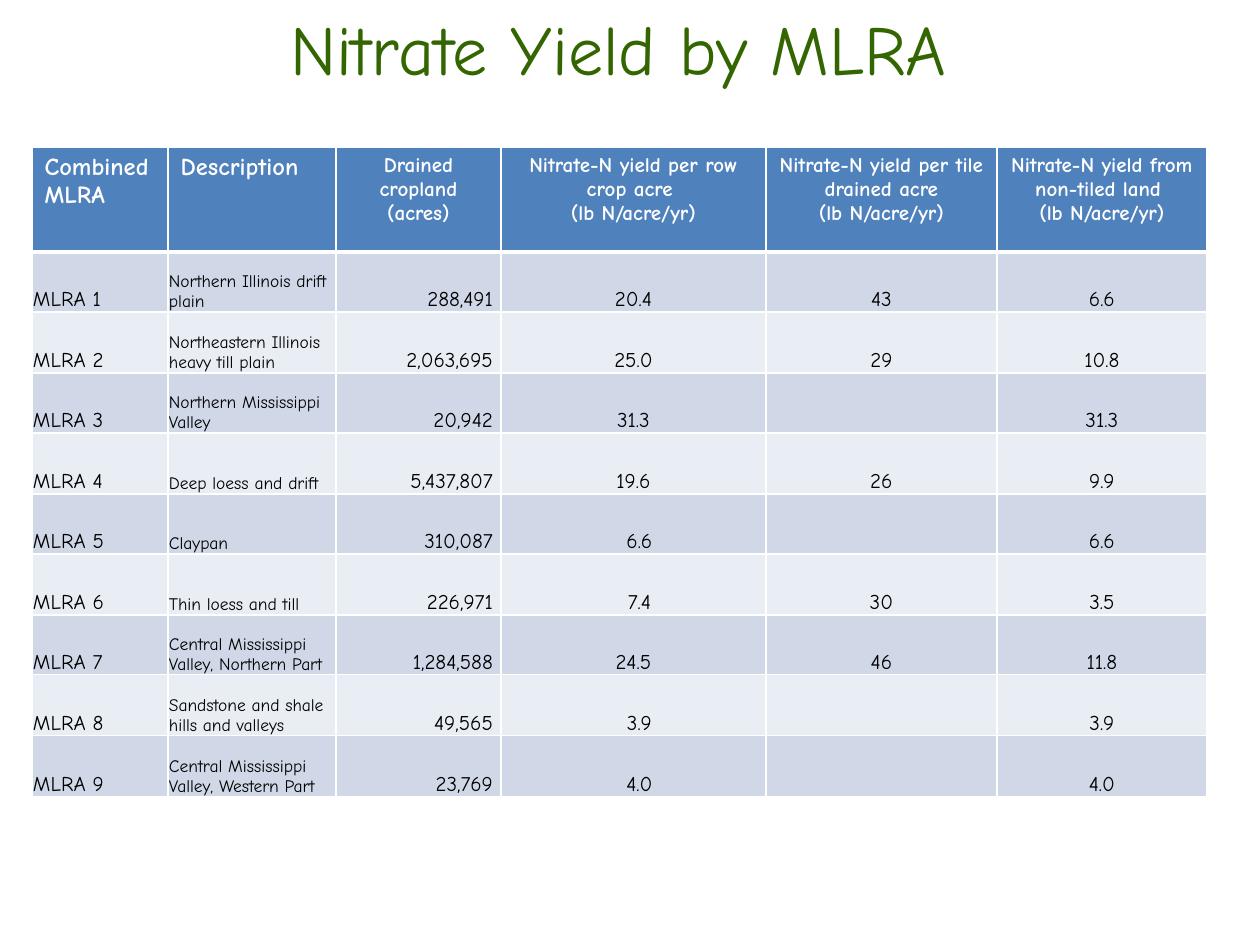
from dataclasses import dataclass
from itertools import pairwise

from lxml import etree
from pptx import Presentation
from pptx import util as u
from pptx.dml.color import RGBColor
from pptx.enum import text
from pptx.oxml import ns

FONT = "Comic Neue"
GREEN = RGBColor(0x33, 0x66, 0x00)
BLUE = RGBColor(0x4F, 0x81, 0xBD)
BAND_DARK = RGBColor(0xD0, 0xD8, 0xE8)
BAND_LIGHT = RGBColor(0xE9, 0xED, 0xF4)
WHITE = RGBColor(0xFF, 0xFF, 0xFF)
BLACK = RGBColor(0x00, 0x00, 0x00)

LEFT, CENTER, RIGHT = text.PP_ALIGN.LEFT, text.PP_ALIGN.CENTER, text.PP_ALIGN.RIGHT

HEADER_HEIGHT = 105
BODY_HEIGHT = 545
SHORT_YIELD_INSET = 13  # nudges one-digit yields under the two-digit ones


def px(length: int) -> u.Emu:
    return u.Emu(round(length * 914400 / 126))


@dataclass(frozen=True)
class Column:
    heading: tuple[str, ...]
    width: int
    heading_size: int = 12
    heading_align: text.PP_ALIGN = CENTER
    size: int = 12
    align: text.PP_ALIGN = CENTER
    right_inset: int = 1


@dataclass(frozen=True)
class Region:
    name: str
    description: str
    drained: str
    row_crop_yield: str
    tile_yield: str
    untiled_yield: str

    def values(self) -> tuple[str, ...]:
        return (self.name, self.description, self.drained,
                self.row_crop_yield, self.tile_yield, self.untiled_yield)


UNIT = "(lb N/acre/yr)"
COLUMNS = [
    Column(("Combined MLRA",), 136, 14, LEFT, 12, LEFT),
    Column(("Description",), 168, 14, LEFT, 10, LEFT),
    Column(("Drained cropland (acres)",), 165, align=RIGHT, right_inset=8),
    Column(("Nitrate-N yield per row crop acre ", UNIT), 265),
    Column(("Nitrate-N yield per tile drained acre", UNIT), 231),
    Column(("Nitrate-N yield from non-tiled land ", UNIT), 210),
]
REGIONS = [
    Region("MLRA 1", "Northern Illinois drift plain", "288,491", "20.4", "43", "6.6"),
    Region("MLRA 2", "Northeastern Illinois heavy till plain", "2,063,695", "25.0", "29", "10.8"),
    Region("MLRA 3", "Northern Mississippi Valley", "20,942", "31.3", "", "31.3"),
    Region("MLRA 4", "Deep loess and drift", "5,437,807", "19.6", "26", "9.9"),
    Region("MLRA 5", "Claypan", "310,087", "6.6", "", "6.6"),
    Region("MLRA 6", "Thin loess and till", "226,971", "7.4", "30", "3.5"),
    Region("MLRA 7", "Central Mississippi Valley, Northern Part", "1,284,588", "24.5", "46", "11.8"),
    Region("MLRA 8", "Sandstone and shale hills and valleys", "49,565", "3.9", "", "3.9"),
    Region("MLRA 9", "Central Mississippi Valley, Western Part", "23,769", "4.0", "", "4.0"),
]


def add_span(para, wording: str, size: int, color: RGBColor, bold: bool = False) -> None:
    span = para.add_run()
    span.text = wording
    span.font.name = FONT
    span.font.size = u.Pt(size)
    span.font.bold = bold
    span.font.color.rgb = color


def paint_cell(cell, fill: RGBColor, top: int = 1, bottom: int = 1) -> None:
    """Borders come before the fill, as the schema asks."""
    properties = cell._tc.get_or_add_tcPr()
    for side, points in (("L", 1), ("R", 1), ("T", top), ("B", bottom)):
        line = etree.SubElement(properties, ns.qn(f"a:ln{side}"), w=str(u.Pt(points)))
        solid = etree.SubElement(line, ns.qn("a:solidFill"))
        etree.SubElement(solid, ns.qn("a:srgbClr"), val=str(WHITE))
    cell.fill.solid()
    cell.fill.fore_color.rgb = fill


def fill_heading(cell, column: Column) -> None:
    paint_cell(cell, BLUE, bottom=3)
    frame = cell.text_frame
    for index, wording in enumerate(column.heading):
        para = frame.add_paragraph() if index else frame.paragraphs[0]
        para.alignment = column.heading_align
        add_span(para, wording, column.heading_size, WHITE, bold=True)


def fill_value(cell, column: Column, value: str, fill: RGBColor, left: int, top: int) -> None:
    paint_cell(cell, fill, top=top)
    cell.vertical_anchor = text.MSO_ANCHOR.BOTTOM
    cell.margin_left, cell.margin_right = px(left), px(column.right_inset)
    cell.margin_top, cell.margin_bottom = px(1), px(0)
    para = cell.text_frame.paragraphs[0]
    para.alignment = column.align
    if value:
        add_span(para, value, column.size, BLACK)


def add_title(page) -> None:
    box = page.shapes.title
    box.left, box.top, box.width, box.height = px(0), px(0), px(1260), px(94)
    box.text_frame.vertical_anchor = text.MSO_ANCHOR.MIDDLE
    para = box.text_frame.paragraphs[0]
    para.alignment = CENTER
    add_span(para, "Nitrate Yield by MLRA ", 40, GREEN)


def add_yield_table(page) -> None:
    count = len(REGIONS)
    width = sum(column.width for column in COLUMNS)
    table = page.shapes.add_table(count + 1, len(COLUMNS), px(32), px(147),
                                  px(width), px(HEADER_HEIGHT + BODY_HEIGHT)).table

    # Row heights share the body evenly in whole px
    edges = [BODY_HEIGHT * index // count for index in range(count + 1)]
    heights = [HEADER_HEIGHT] + [lower - upper for upper, lower in pairwise(edges)]
    for row, height in zip(table.rows, heights):
        row.height = px(height)

    # Header row
    for index, column in enumerate(COLUMNS):
        table.columns[index].width = px(column.width)
        fill_heading(table.cell(0, index), column)

    # Banded region rows
    for row, region in enumerate(REGIONS, start=1):
        fill = BAND_DARK if row % 2 else BAND_LIGHT
        for index, (column, value) in enumerate(zip(COLUMNS, region.values())):
            short = index == 3 and float(value) < 10
            fill_value(table.cell(row, index), column, value, fill,
                       left=SHORT_YIELD_INSET if short else 1,
                       top=3 if row == 1 else 1)


def main() -> None:
    deck = Presentation()
    deck.slide_width, deck.slide_height = px(1260), px(945)
    page = deck.slides.add_slide(deck.slide_layouts[5])
    add_title(page)
    add_yield_table(page)
    deck.save("out.pptx")


if __name__ == "__main__":
    main()
